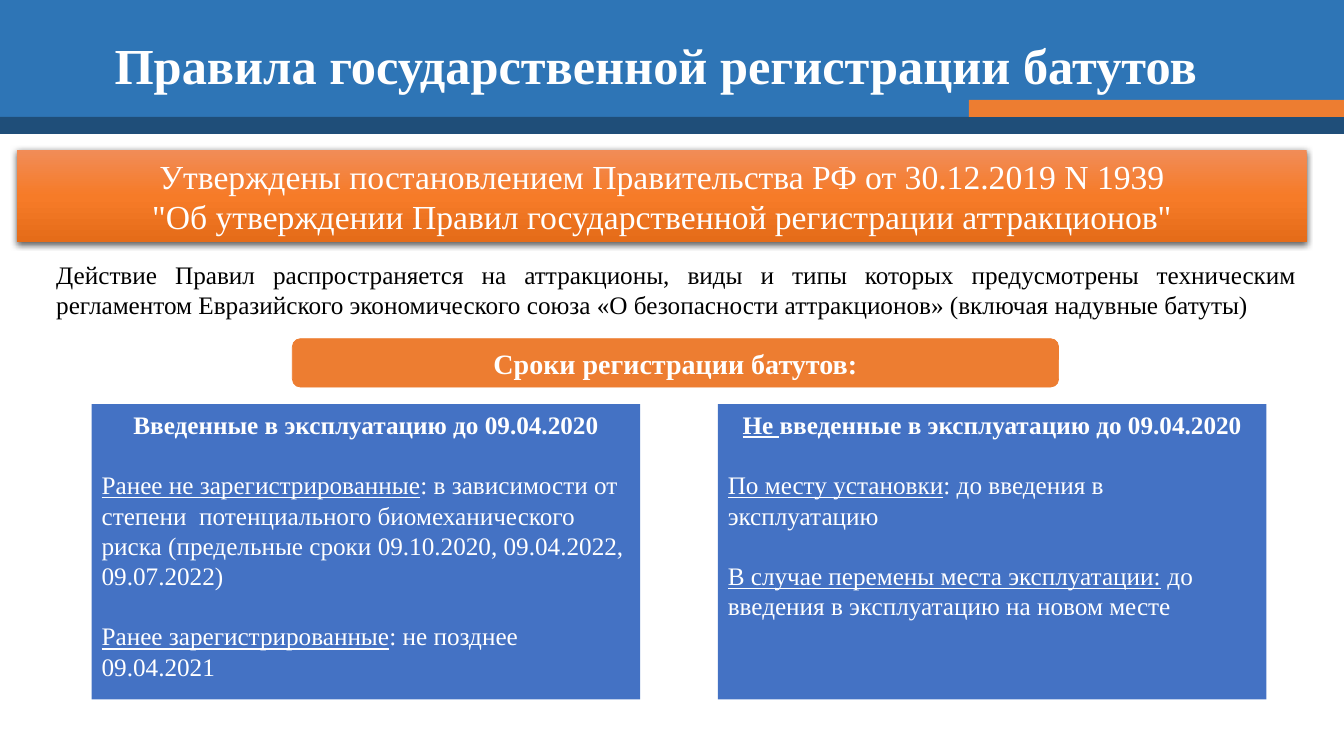
import copy
from dataclasses import dataclass

import pptx
import pptx.dml.color
import pptx.enum.shapes
import pptx.enum.text
import pptx.oxml
import pptx.oxml.ns
import pptx.util

Inches, Pt = pptx.util.Inches, pptx.util.Pt
SHAPE = pptx.enum.shapes.MSO_SHAPE
ALIGN = pptx.enum.text.PP_ALIGN
ANCHOR = pptx.enum.text.MSO_ANCHOR
qn = pptx.oxml.ns.qn

TITLE = "Правила государственной регистрации батутов"
DECREE = [
    "Утверждены постановлением Правительства РФ от 30.12.2019 N 1939",
    "\"Об утверждении Правил государственной регистрации аттракционов\"",
]
SCOPE = (
    "Действие Правил распространяется на аттракционы, виды и типы которых "
    "предусмотрены техническим регламентом Евразийского экономического союза "
    "«О безопасности аттракционов» (включая надувные батуты)"
)
TERMS = "Сроки регистрации батутов:"
# Each paragraph is a pair: underlined start, plain rest; the first is the heading.
CARDS = [
    [
        ("", "Введенные в эксплуатацию до 09.04.2020"),
        ("Ранее не зарегистрированные",
         ": в зависимости от степени  потенциального биомеханического риска "
         "(предельные сроки 09.10.2020, 09.04.2022, 09.07.2022)"),
        ("Ранее зарегистрированные", ": не позднее 09.04.2021"),
    ],
    [
        ("Не ", "введенные в эксплуатацию до 09.04.2020"),
        ("По месту установки", ": до введения в эксплуатацию"),
        ("В случае перемены места эксплуатации:",
         " до введения в эксплуатацию на новом месте"),
    ],
]


@dataclass(frozen=True)
class Theme:
    font: str = "Times New Roman"
    header: str = "2E75B6"
    stripe: str = "1F4E79"
    accent: str = "ED7D31"
    card: str = "4472C4"
    light: str = "FFFFFF"
    dark: str = "000000"
    gradient: tuple = ((0, "F18C57"), (50, "F67B28"), (100, "E56C19"))
    title_size: int = 36
    decree_size: int = 24
    terms_size: int = 20
    body_size: int = 18


THEME = Theme()
HEADER_BARS = [
    ((0, 0, 13.33, 1.2), THEME.header),
    ((0, 1.16, 13.33, 0.17), THEME.stripe),
    ((9.61, 0.99, 3.72, 0.17), THEME.accent),
]
CARD_LEFT, CARD_TOP, CARD_W, CARD_H, CARD_STEP = 0.91, 4.01, 5.44, 2.93, 6.21


def rgb(color):
    return pptx.dml.color.RGBColor.from_string(color)


def add_box(s, box, color, kind=SHAPE.RECTANGLE):
    sp = s.shapes.add_shape(kind, *map(Inches, box))
    sp.shadow.inherit = False
    sp.fill.solid()
    sp.fill.fore_color.rgb = rgb(color)
    sp.line.fill.background()
    return sp


def write(tf, paragraphs, size, color=THEME.light, align=ALIGN.CENTER,
          bold=False, anchor=ANCHOR.MIDDLE):
    """Fill a text frame; a paragraph is an (underlined, plain) pair of strings."""
    tf.word_wrap = True
    tf.auto_size = pptx.enum.text.MSO_AUTO_SIZE.NONE
    tf.vertical_anchor = anchor
    for i, parts in enumerate(paragraphs):
        p = tf.paragraphs[0] if i == 0 else tf.add_paragraph()
        p.alignment = align
        p.font.name, p.font.size, p.font.bold = THEME.font, Pt(size), bold
        p.font.color.rgb = rgb(color)
        for text, underline in zip(parts, (True, None)):
            if text:
                r = p.add_run()
                r.text = text
                r.font.underline = underline


def set_gradient(sp, stops):
    sp.fill.gradient()
    sp.fill.gradient_angle = 270
    stop_list = sp.element.spPr.find(qn("a:gradFill")).find(qn("a:gsLst"))
    stop_list.insert(1, copy.deepcopy(stop_list[0]))
    for stop, (position, color) in zip(sp.fill.gradient_stops, stops):
        stop.position = position / 100
        stop.color.rgb = rgb(color)


def add_shadow(sp):
    effects = sp.element.spPr.find(qn("a:effectLst"))
    effects.append(pptx.oxml.parse_xml(
        f'<a:outerShdw {pptx.oxml.ns.nsdecls("a")} blurRad="{Pt(4.5)}" '
        f'dist="{Pt(1.5)}" dir="5400000" algn="ctr" rotWithShape="0">'
        f'<a:srgbClr val="{THEME.dark}"><a:alpha val="63000"/></a:srgbClr>'
        '</a:outerShdw>'))


def add_title(s):
    title = s.shapes.title
    title.left, title.top = Inches(-0.2), Inches(0.28)
    title.width, title.height = Inches(13.41), Inches(0.71)
    write(title.text_frame, [("", TITLE)], THEME.title_size, bold=True)
    # Bring the title in front of the header bars.
    title.element.getparent().append(title.element)


def add_card(s, index, paragraphs):
    left = CARD_LEFT + index * CARD_STEP
    sp = add_box(s, (left, CARD_TOP, CARD_W, CARD_H), THEME.card)
    tf = sp.text_frame
    write(tf, paragraphs, THEME.body_size, align=ALIGN.LEFT, anchor=ANCHOR.TOP)
    heading, *items = tf.paragraphs
    heading.alignment = ALIGN.CENTER
    heading.font.bold = True
    for p in items:
        p.space_before = Pt(21.6)


def main():
    prs = pptx.Presentation()
    prs.slide_width, prs.slide_height = Inches(13.33), Inches(7.5)
    s = prs.slides.add_slide(prs.slide_layouts.get_by_name("Title Only"))

    for box, color in HEADER_BARS:
        add_box(s, box, color)
    add_title(s)

    decree = add_box(s, (0.17, 1.49, 12.79, 0.91), THEME.accent)
    set_gradient(decree, THEME.gradient)
    add_shadow(decree)
    write(decree.text_frame, [("", line) for line in DECREE], THEME.decree_size)

    scope = s.shapes.add_textbox(*map(Inches, (0.46, 2.52, 12.5, 0.71)))
    write(scope.text_frame, [("", SCOPE)], THEME.body_size, THEME.dark,
          ALIGN.JUSTIFY, anchor=ANCHOR.TOP)

    terms = add_box(s, (2.9, 3.36, 7.6, 0.48), THEME.accent, SHAPE.ROUNDED_RECTANGLE)
    terms.line.color.rgb = rgb(THEME.accent)
    terms.line.width = Pt(0.5)
    write(terms.text_frame, [("", TERMS)], THEME.terms_size, bold=True)

    for index, paragraphs in enumerate(CARDS):
        add_card(s, index, paragraphs)

    prs.save("out.pptx")


if __name__ == "__main__":
    main()
